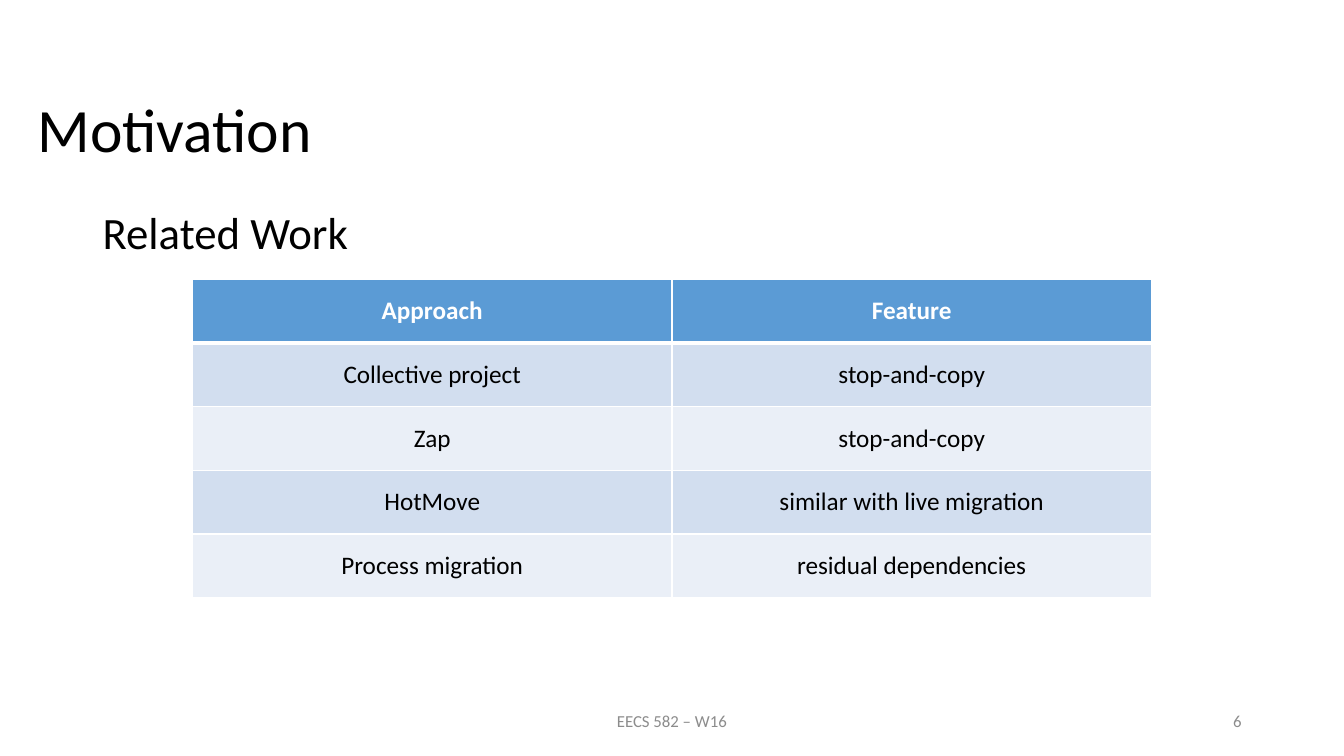
from lxml.etree import SubElement as Sub
from pptx import Presentation
from pptx.dml.color import RGBColor as Rgb
from pptx.enum.text import MSO_ANCHOR as Anchor, PP_ALIGN as Align
from pptx.oxml.ns import qn
from pptx.util import Pt

ROWS = [
    ("Approach", "Feature"),
    ("Collective project", "stop-and-copy"),
    ("Zap", "stop-and-copy"),
    ("HotMove", "similar with live migration"),
    ("Process migration", "residual dependencies"),
]
HEAD, BANDS = "5B9BD5", ("D2DEEF", "EAEFF7")
WHITE, BLACK, GREY = "FFFFFF", "000000", "8C8C8C"


def paint(target, color):
    """Give a font or fill a solid colour from a hex string."""
    if hasattr(target, "solid"):
        target.solid()
        target.fore_color.rgb = Rgb.from_string(color)
    else:
        target.color.rgb = Rgb.from_string(color)


def write(frame, text, size, color=BLACK, align=Align.LEFT, bold=False):
    """Fill a text frame with one formatted paragraph."""
    frame.text = text
    para = frame.paragraphs[0]
    para.alignment = align
    font = para.runs[0].font
    font.name, font.size, font.bold = "Calibri", Pt(size), bold
    paint(font, color)
    return para


def place(shape, left, top, width, height):
    """Move and size a shape, in points."""
    shape.left, shape.top = Pt(left), Pt(top)
    shape.width, shape.height = Pt(width), Pt(height)


def label(slide, box, text, size, anchor=Anchor.MIDDLE, **style):
    """Add a wrapping text box."""
    frame = slide.shapes.add_textbox(*map(Pt, box)).text_frame
    frame.word_wrap = True
    frame.vertical_anchor = anchor
    return write(frame, text, size, **style)


def edge(cell, side, width):
    """Draw one white border of a cell."""
    line = Sub(cell._tc.get_or_add_tcPr(), qn("a:ln" + side), w=str(Pt(width)))
    fill = Sub(line, qn("a:solidFill"))
    Sub(fill, qn("a:srgbClr"), val=WHITE)


def grid(slide, left, top, width, height):
    """Add the banded table of approaches."""
    box = map(Pt, (left, top, width, height))
    table = slide.shapes.add_table(len(ROWS), 2, *box).table
    for row, texts in enumerate(ROWS):
        head = row == 0
        for col, text in enumerate(texts):
            cell = table.cell(row, col)
            cell.vertical_anchor = Anchor.MIDDLE
            for side in "LRTB":
                thick = (row, side) in ((0, "B"), (1, "T"))
                edge(cell, side, 3 if thick else 1)
            paint(cell.fill, HEAD if head else BANDS[(row - 1) % 2])
            write(cell.text_frame, text, 18, WHITE if head else BLACK,
                  Align.CENTER, head)


def main():
    """Build and save the slide."""
    deck = Presentation()
    deck.slide_width, deck.slide_height = Pt(960), Pt(540)
    slide = deck.slides.add_slide(deck.slide_layouts[5])
    title = slide.shapes.title
    place(title, 19.5, 42.5, 828, 104.4)
    title.text_frame.vertical_anchor = Anchor.MIDDLE
    write(title.text_frame, "Motivation", 44).line_spacing = 0.9
    lead = label(slide, (66.25, 147, 828, 52.5), "Related Work", 32, Anchor.TOP)
    lead.line_spacing = 0.9
    grid(slide, 137.5, 199.5, 685, 227.5)
    label(slide, (318, 500.5, 324, 28.75), "EECS 582 – W16", 12,
          color=GREY, align=Align.CENTER)
    label(slide, (678, 500.5, 216, 28.75), "6", 12,
          color=GREY, align=Align.RIGHT)
    deck.save("out.pptx")


if __name__ == "__main__":
    main()
